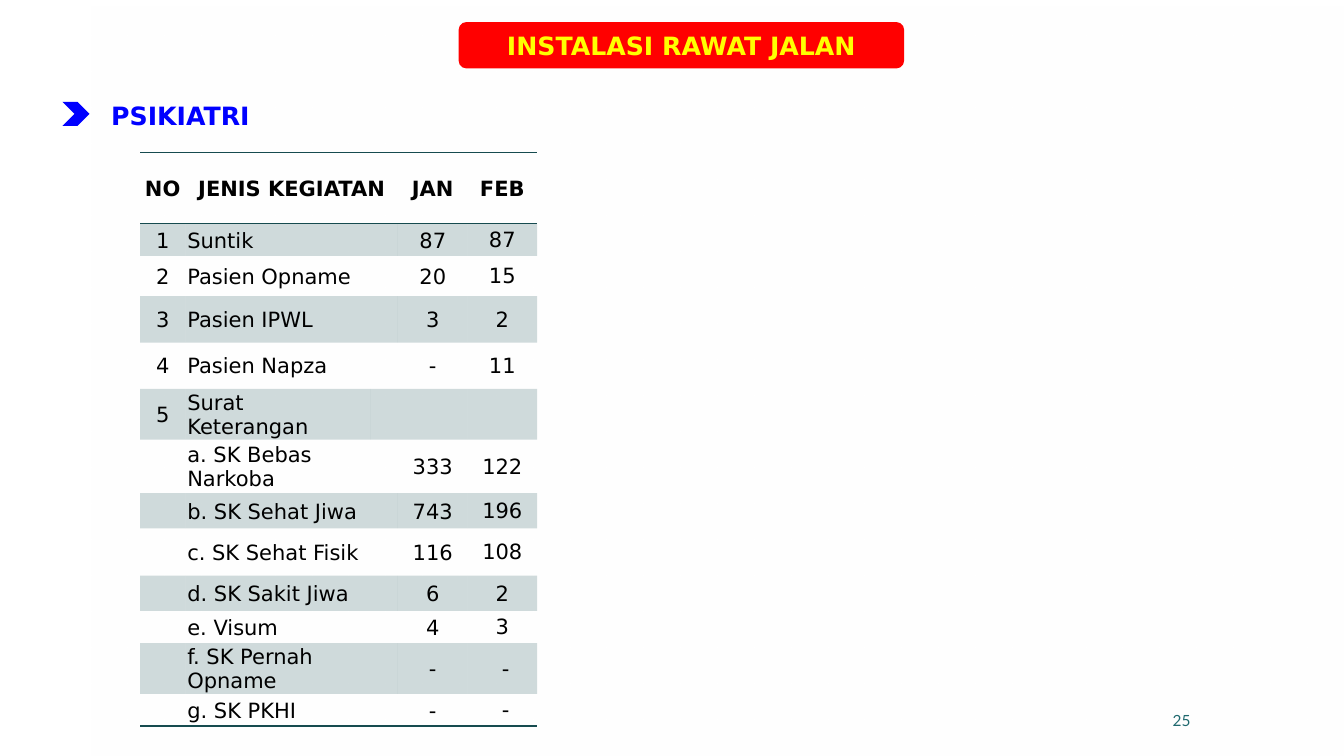
from dataclasses import dataclass

from lxml import etree
from pptx import Presentation
from pptx import util as u
from pptx.dml import color
from pptx.enum import shapes, text
from pptx.oxml import ns

COLS, ROWS = 96, 54
COLORS = {
    "white": "FFFFFF", "black": "000000", "red": "FF0000", "yellow": "FFFF00",
    "blue": "0000FF", "teal": "164B4F", "page": "1F696F",
}
LEFT, CENTER, RIGHT = text.PP_ALIGN.LEFT, text.PP_ALIGN.CENTER, text.PP_ALIGN.RIGHT
MIDDLE, TOP = text.MSO_ANCHOR.MIDDLE, text.MSO_ANCHOR.TOP
NO_STYLE_NO_GRID = "{2D5ABB26-0587-4C30-8999-92F81FD0307C}"
BODY_FONT = "DejaVu Sans"
TABLE_SIZE = 15

prs = Presentation()
prs.slide_width, prs.slide_height = u.Inches(13.33), u.Inches(7.5)


@dataclass(frozen=True)
class Box:
    col: float
    row: float
    cols: float
    rows: float


@dataclass(frozen=True)
class Style:
    size: float
    color: str
    bold: bool = False
    align: text.PP_ALIGN = CENTER
    font: str = BODY_FONT


@dataclass(frozen=True)
class Label:
    box: Box
    words: str
    style: Style
    anchor: text.MSO_ANCHOR = MIDDLE
    wrap: bool = True


@dataclass(frozen=True)
class Activity:
    no: str
    name: str
    jan: str
    feb: str
    rows: float
    name_span: int = 2


PANEL = Box(6.55, 0, 89.45, 54)
TITLE = Label(Box(32.76, 1.58, 31.82, 3.31), "INSTALASI RAWAT JALAN",
              Style(18, "yellow", True))
CHEVRON = Box(4.46, 7.27, 1.94, 1.73)
LABELS = [
    Label(Box(63.36, 50.04, 22.39, 2.88), "25", Style(11, "page", align=RIGHT, font="Lato")),
    Label(Box(6.62, 6.84, 12.53, 2.88), "PSIKIATRI", Style(18, "blue", True), TOP, False),
]
TABLE_AT = (10, 10.87)
TABLE_COLS = [3.24, 13.25, 1.94, 4.97, 4.97]
ACTIVITIES = [
    Activity("NO", "JENIS KEGIATAN", "JAN", "FEB", 5.11),
    Activity("1", "Suntik", "87", "87", 2.3),
    Activity("2", "Pasien Opname", "20", "15", 2.88),
    Activity("3", "Pasien IPWL", "3", "2", 3.31),
    Activity("4", "Pasien Napza", "-", "11", 3.31),
    Activity("5", "Surat Keterangan", "", "", 3.6, name_span=1),
    Activity("", "a. SK Bebas Narkoba", "333", "122", 3.82),
    Activity("", "b. SK Sehat Jiwa", "743", "196", 2.52),
    Activity("", "c. SK Sehat Fisik", "116", "108", 3.38),
    Activity("", "d. SK Sakit Jiwa", "6", "2", 2.52),
    Activity("", "e. Visum", "4", "3", 2.3),
    Activity("", "f. SK Pernah Opname", "-", " -", 3.6),
    Activity("", "g. SK PKHI", "-", " -", 2.3),
]


def x(cols: float) -> int:
    return round(prs.slide_width * cols / COLS)


def y(rows: float) -> int:
    return round(prs.slide_height * rows / ROWS)


def place(box: Box) -> tuple[int, int, int, int]:
    return x(box.col), y(box.row), x(box.cols), y(box.rows)


def rgb(name: str) -> color.RGBColor:
    return color.RGBColor.from_string(COLORS[name])


def set_alpha(clr, percent: int) -> None:
    etree.SubElement(clr, ns.qn("a:alpha"), val=str(percent * 1000))


def write(tf, words: str, style: Style) -> None:
    p = tf.paragraphs[0]
    p.text = words
    p.alignment = style.align
    for r in p.runs:
        r.font.name, r.font.size, r.font.bold = style.font, u.Pt(style.size), style.bold
        r.font.color.rgb = rgb(style.color)
    if not words:
        etree.SubElement(p._p, ns.qn("a:endParaRPr"), sz=str(style.size * 100))


def add_shape(slide, kind: shapes.MSO_SHAPE, box: Box, fill: str):
    s = slide.shapes.add_shape(kind, *place(box))
    s.shadow.inherit = False
    s.fill.solid()
    s.fill.fore_color.rgb = rgb(fill)
    s.line.fill.background()
    return s


def add_panel(slide) -> None:
    """Draw the white panel that fades out."""
    s = add_shape(slide, shapes.MSO_SHAPE.RECTANGLE, PANEL, "white")
    s.fill.gradient()
    s.fill.gradient_angle = 90
    for stop in s.fill.gradient_stops:
        stop.color.rgb = rgb("white")
    for clr, percent in zip(s._element.spPr.iter(ns.qn("a:srgbClr")), (60, 0)):
        set_alpha(clr, percent)


def add_label(slide, label: Label) -> None:
    tf = slide.shapes.add_textbox(*place(label.box)).text_frame
    tf.word_wrap = label.wrap
    tf.vertical_anchor = label.anchor
    if not label.wrap:
        tf.auto_size = text.MSO_AUTO_SIZE.SHAPE_TO_FIT_TEXT
    write(tf, label.words, label.style)


def add_rule(cell, side: str) -> None:
    """Draw a cell border; add the bottom one before the top one."""
    ln = etree.Element(ns.qn(f"a:ln{side}"), w=str(u.Pt(1)))
    fill = etree.SubElement(ln, ns.qn("a:solidFill"))
    etree.SubElement(fill, ns.qn("a:srgbClr"), val=COLORS["teal"])
    cell._tc.get_or_add_tcPr().insert(0, ln)


def paint(cell, banded: bool) -> None:
    if not banded:
        cell.fill.background()
        return
    cell.fill.solid()
    cell.fill.fore_color.rgb = rgb("teal")
    set_alpha(next(cell._tc.tcPr.iter(ns.qn("a:srgbClr"))), 20)


def add_activity(table, i: int, activity: Activity) -> None:
    table.rows[i].height = y(activity.rows)
    header = i == 0
    jan_col = 1 + activity.name_span
    words = {0: activity.no, 1: activity.name, jan_col: activity.jan, 4: activity.feb}
    for j in range(len(TABLE_COLS)):
        cell = table.cell(i, j)
        inset = u.Inches(0.01 if j == 4 and not header else 0.02)
        cell.margin_left = cell.margin_right = cell.margin_top = inset
        cell.margin_bottom = 0
        cell.vertical_anchor = MIDDLE
        align = LEFT if j == 1 and not header else CENTER
        write(cell.text_frame, words.get(j, ""), Style(TABLE_SIZE, "black", header, align))
        paint(cell, i % 2 == 1)
        if header or i == len(ACTIVITIES) - 1:
            add_rule(cell, "B")
        if header:
            add_rule(cell, "T")
    first = 1 if activity.name_span == 2 else 2
    table.cell(i, first).merge(table.cell(i, first + 1))


def add_activity_table(slide) -> None:
    box = Box(*TABLE_AT, sum(TABLE_COLS), sum(a.rows for a in ACTIVITIES))
    table = slide.shapes.add_table(len(ACTIVITIES), len(TABLE_COLS), *place(box)).table
    table.first_row = table.horz_banding = False
    table._tbl.tblPr.find(ns.qn("a:tableStyleId")).text = NO_STYLE_NO_GRID
    for column, width in zip(table.columns, TABLE_COLS):
        column.width = x(width)
    for i, activity in enumerate(ACTIVITIES):
        add_activity(table, i, activity)


def main() -> None:
    slide = prs.slides.add_slide(prs.slide_layouts[6])
    add_panel(slide)
    add_activity_table(slide)
    s = add_shape(slide, shapes.MSO_SHAPE.ROUNDED_RECTANGLE, TITLE.box, "red")
    s.text_frame.vertical_anchor = TITLE.anchor
    write(s.text_frame, TITLE.words, TITLE.style)
    add_shape(slide, shapes.MSO_SHAPE.CHEVRON, CHEVRON, "blue")
    for label in LABELS:
        add_label(slide, label)
    prs.save("out.pptx")


if __name__ == "__main__":
    main()
